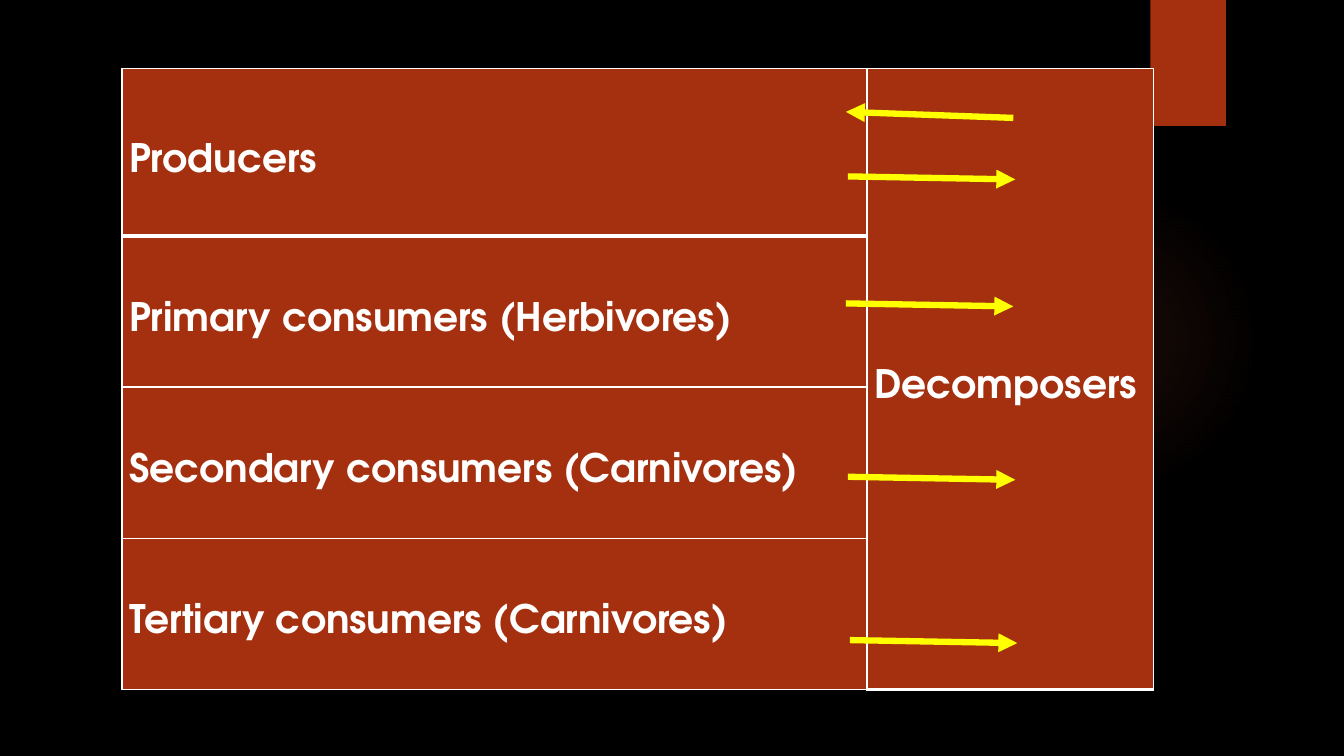
from pptx import Presentation
from pptx.dml.color import RGBColor
from pptx.enum.shapes import MSO_CONNECTOR, MSO_SHAPE
from pptx.enum.text import MSO_ANCHOR, PP_ALIGN
from pptx.oxml import parse_xml
from pptx.oxml.ns import nsdecls, qn
from pptx.util import Inches, Pt
from lxml.etree import SubElement

LEVELS = [
    "Producers",
    "Primary consumers (Herbivores)",
    "Secondary consumers (Carnivores)",
    "Tertiary consumers (Carnivores)",
]
RECYCLER = "Decomposers"

TABLE_LEFT, TABLE_TOP = 1.21, 0.68
COLUMN_WIDTHS = [7.39, 2.84]
ROW_HEIGHTS = [1.66, 1.5, 1.5, 1.5]

# Start of each arrow running from a level to the decomposers
ARROW_STARTS = [(8.41, 1.75), (8.39, 3.01), (8.41, 4.73), (8.43, 6.35)]
ARROW_RUN, ARROW_DROP = 1.66, 0.03
RETURN_ARROW = (10.05, 1.17, 8.39, 1.11)

BLACK = RGBColor(0x00, 0x00, 0x00)
RUST = RGBColor(0xA5, 0x30, 0x0F)
GLOW = RGBColor(0xEE, 0x6E, 0x4A)
WHITE = RGBColor(0xFF, 0xFF, 0xFF)
YELLOW = RGBColor(0xFF, 0xFF, 0x00)
GLOW_STOPS = [(0, 7), (36, 6), (69, 0)]  # position and opacity, percent

FONT_FORMAT = {"name": "TeX Gyre Adventor", "size": Pt(28), "bold": True}
PARAGRAPH_FORMAT = {"alignment": PP_ALIGN.JUSTIFY, "line_spacing": 1.5,
                    "space_after": Pt(10)}
CELL_FORMAT = {"vertical_anchor": MSO_ANCHOR.MIDDLE,
               "margin_left": Inches(0.07), "margin_right": Inches(0.07),
               "margin_top": 0, "margin_bottom": 0}


def apply_format(target, values):
    for name, value in values.items():
        setattr(target, name, value)


def add_plain_shape(slide, kind, left, top, width, height):
    shape = slide.shapes.add_shape(
        kind, Inches(left), Inches(top), Inches(width), Inches(height))
    shape.shadow.inherit = False
    shape.line.fill.background()
    return shape


def add_glow(slide):
    """Add the faint circle whose colour fades out from its centre."""
    circle = add_plain_shape(slide, MSO_SHAPE.OVAL, 9.41, 1.83, 3.08, 3.08)
    circle.fill.background()
    stops = "".join(
        f'<a:gs pos="{position * 1000}"><a:srgbClr val="{GLOW}">'
        f'<a:alpha val="{opacity * 1000}"/></a:srgbClr></a:gs>'
        for position, opacity in GLOW_STOPS)
    gradient = parse_xml(
        f'<a:gradFill {nsdecls("a")}><a:gsLst>{stops}</a:gsLst>'
        '<a:path path="circle"><a:fillToRect l="50000" t="50000" '
        'r="50000" b="50000"/></a:path></a:gradFill>')
    properties = circle.element.spPr
    properties.replace(properties.find(qn("a:noFill")), gradient)


def set_borders(cell, bottom_points):
    properties = cell._tc.get_or_add_tcPr()
    for side, points in (("L", 1), ("R", 1), ("T", 1), ("B", bottom_points)):
        properties.append(parse_xml(
            f'<a:ln{side} {nsdecls("a")} w="{Pt(points)}"><a:solidFill>'
            f'<a:srgbClr val="{WHITE}"/></a:solidFill></a:ln{side}>'))


def write_cell(cell, text):
    paragraph = cell.text_frame.paragraphs[0]
    apply_format(paragraph, PARAGRAPH_FORMAT)
    run = paragraph.add_run()
    run.text = text
    apply_format(run.font, FONT_FORMAT)
    run.font.color.rgb = WHITE


def add_food_chain(slide):
    frame = slide.shapes.add_table(
        len(LEVELS), len(COLUMN_WIDTHS), Inches(TABLE_LEFT), Inches(TABLE_TOP),
        Inches(sum(COLUMN_WIDTHS)), Inches(sum(ROW_HEIGHTS)))
    table = frame.table
    for column, width in zip(table.columns, COLUMN_WIDTHS):
        column.width = Inches(width)
    for row, height in zip(table.rows, ROW_HEIGHTS):
        row.height = Inches(height)

    last_row = len(LEVELS) - 1
    thick_bottoms = {(0, 0), (0, 1), (last_row, 1)}
    for row in range(len(LEVELS)):
        for column in range(len(COLUMN_WIDTHS)):
            cell = table.cell(row, column)
            set_borders(cell, 3 if (row, column) in thick_bottoms else 1)
            apply_format(cell, CELL_FORMAT)
            cell.fill.solid()
            cell.fill.fore_color.rgb = RUST

    table.cell(0, 1).merge(table.cell(last_row, 1))
    for row, level in enumerate(LEVELS):
        write_cell(table.cell(row, 0), level)
    write_cell(table.cell(0, 1), RECYCLER)


def add_arrow(slide, *ends):
    arrow = slide.shapes.add_connector(
        MSO_CONNECTOR.STRAIGHT, *(Inches(end) for end in ends))
    arrow.line.color.rgb = YELLOW
    arrow.line.width = Pt(4.5)
    SubElement(arrow.line._get_or_add_ln(), qn("a:tailEnd"), type="triangle")
    SubElement(arrow.element.spPr, qn("a:effectLst"))


def main():
    presentation = Presentation()
    presentation.slide_width = Inches(13.33)
    presentation.slide_height = Inches(7.5)
    slide = presentation.slides.add_slide(presentation.slide_layouts[6])
    slide.background.fill.solid()
    slide.background.fill.fore_color.rgb = BLACK

    add_glow(slide)
    tab = add_plain_shape(slide, MSO_SHAPE.RECTANGLE, 11.41, 0, 0.75, 1.25)
    tab.fill.solid()
    tab.fill.fore_color.rgb = RUST

    add_food_chain(slide)
    add_arrow(slide, *RETURN_ARROW)
    for left, top in ARROW_STARTS:
        add_arrow(slide, left, top, left + ARROW_RUN, top + ARROW_DROP)

    presentation.save("out.pptx")


if __name__ == "__main__":
    main()
